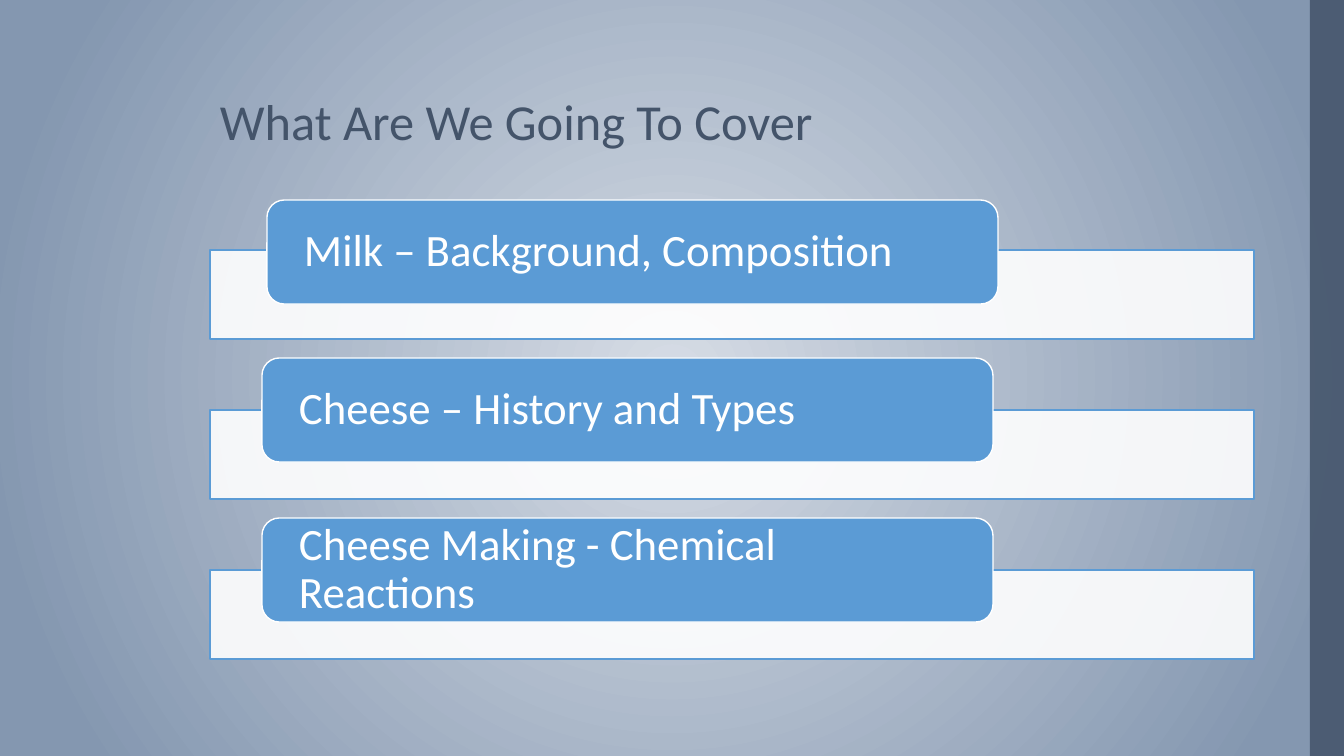
from lxml import etree
from pptx import Presentation
from pptx import util as u
from pptx.dml.color import RGBColor
from pptx.enum import shapes, text
from pptx.oxml.ns import qn

EMU_PER_PX = 914400 / 100.8
WIDTH, HEIGHT = 1344, 756
NAVY, BLUE, WHITE = "44546A", "5B9BD5", "FFFFFF"
# Label, then the offset of its pill from the top left of its bar
TOPICS = [
    ("Milk – Background, Composition", 57, -50),
    ("Cheese – History and Types", 52, -52),
    ("Cheese Making - Chemical Reactions", 52, -52),
]


def px(length):
    return u.Emu(round(length * EMU_PER_PX))


def color(hex_string):
    return RGBColor.from_string(hex_string)


def add_box(slide, kind, box, fill, line=None, opacity=100):
    shape = slide.shapes.add_shape(kind, *map(px, box))
    shape.shadow.inherit = False
    shape.fill.solid()
    shape.fill.fore_color.rgb = color(fill)
    if opacity < 100:
        solid = next(shape.element.spPr.iter(qn("a:srgbClr")))
        etree.SubElement(solid, qn("a:alpha"), val=str(opacity * 1000))
    if line:
        shape.line.color.rgb = color(line)
        shape.line.width = u.Pt(1)
    else:
        shape.line.fill.background()
    return shape


def write(shape, words, size, hex_string, anchor):
    frame = shape.text_frame
    frame.word_wrap = True
    frame.vertical_anchor = anchor
    paragraph = frame.paragraphs[0]
    paragraph.text = words
    paragraph.alignment = text.PP_ALIGN.LEFT
    paragraph.line_spacing = 0.9
    paragraph.font.name = "Calibri"
    paragraph.font.size = u.Pt(size)
    paragraph.font.color.rgb = color(hex_string)
    return frame


def paint_background(slide):
    """Fill the slide with a gradient that darkens outward from its centre."""
    fill = slide.background.fill
    fill.gradient()
    for stop, position, tone in zip(fill.gradient_stops, (0, 0.9), ("D6DCE5", "8497B0")):
        stop.position = position
        stop.color.rgb = color(tone)
    gradient = next(slide.element.iter(qn("a:gradFill")))
    gradient.remove(gradient.find(qn("a:lin")))
    circle = etree.SubElement(gradient, qn("a:path"), path="circle")
    etree.SubElement(circle, qn("a:fillToRect"), l="50000", t="50000", r="50000", b="50000")


def add_title(slide, box):
    title = slide.shapes.add_textbox(*map(px, box))
    write(title, "What Are We Going To Cover", 36, NAVY, text.MSO_ANCHOR.BOTTOM)


def add_topics(slide, box, pitch=160):
    """Stack a pale bar with a labelled pill for each topic."""
    left, top, width, height = box
    bar_height = height - pitch * (len(TOPICS) - 1)
    for index, (label, dx, dy) in enumerate(TOPICS):
        y = top + index * pitch
        add_box(slide, shapes.MSO_SHAPE.RECTANGLE, (left, y, width, bar_height),
                WHITE, BLUE, opacity=90)
        pill = add_box(slide, shapes.MSO_SHAPE.ROUNDED_RECTANGLE,
                       (left + dx, y + dy, 731, 104), BLUE, WHITE)
        frame = write(pill, label, 32, WHITE, text.MSO_ANCHOR.MIDDLE)
        frame.margin_left = frame.margin_right = px(32)
        frame.margin_top = frame.margin_bottom = 0


def main():
    presentation = Presentation()
    presentation.slide_width, presentation.slide_height = px(WIDTH), px(HEIGHT)
    slide = presentation.slides.add_slide(presentation.slide_layouts[6])
    paint_background(slide)
    add_box(slide, shapes.MSO_SHAPE.RECTANGLE, (1310, 0, WIDTH - 1310, HEIGHT),
            NAVY, opacity=87)
    add_title(slide, (210, 19, 1044, 137))
    add_topics(slide, (210, 250, 1044, 409))
    presentation.save("out.pptx")


if __name__ == "__main__":
    main()
